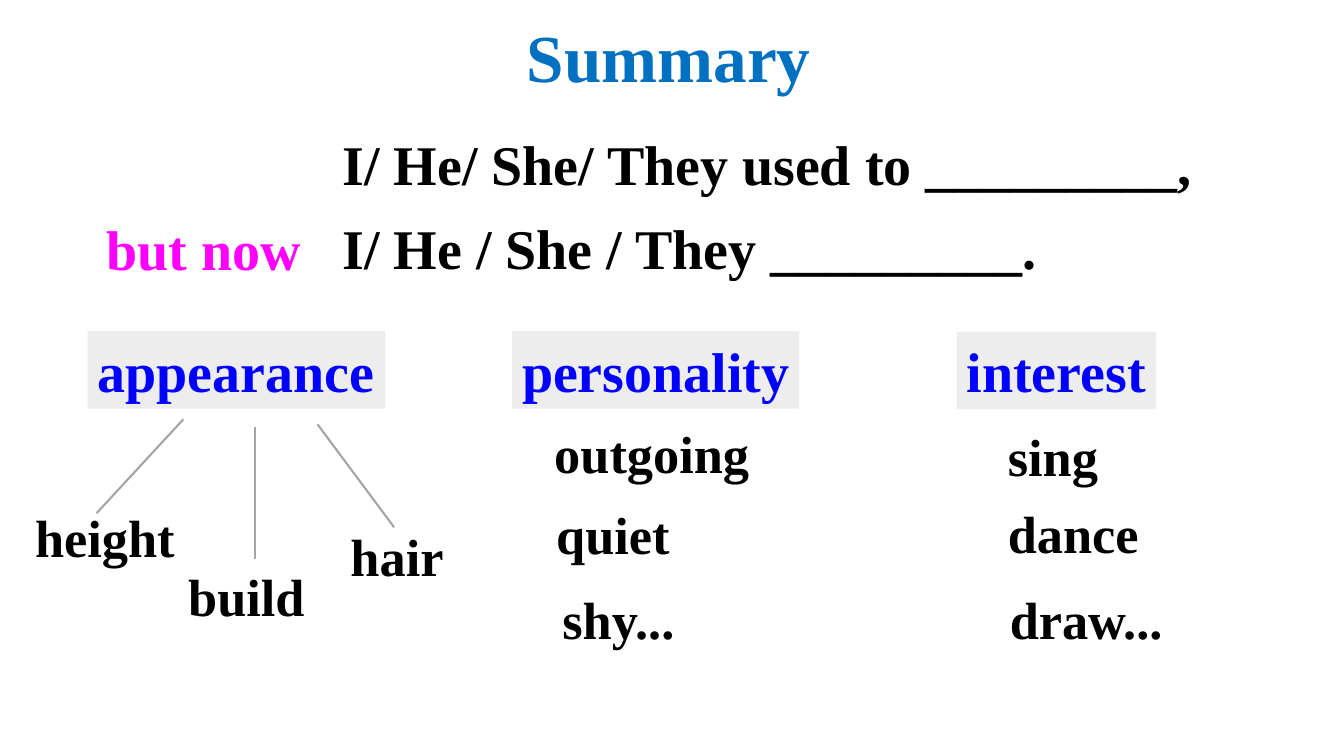
from dataclasses import dataclass

import pptx
import pptx.dml.color
import pptx.enum.shapes
import pptx.enum.text
import pptx.util
from lxml import etree

Pt = pptx.util.Pt


@dataclass(frozen=True)
class Theme:
    font: str = "Times New Roman"
    title_size: float = 48
    lead_size: float = 40
    word_size: float = 37.4
    title: str = "0070C0"
    text: str = "000000"
    accent: str = "FF00FF"
    topic: str = "0000FF"
    topic_fill: str = "EDEDED"
    branch: str = "A5A5A5"


THEME = Theme()

# Offsets are measured from the topic box: (word, x, y, width).
TOPICS = [
    ("appearance", (62.6, 236.5, 212.4, 55.4),
     [("height", -44.6, 120.7, 116), ("build", 64.8, 163.1, 100), ("hair", 180.7, 134.7, 83)]),
    ("personality", (365.8, 236.5, 205.2, 55.4),
     [("outgoing", 23, 60.9, 156), ("quiet", 24.4, 118.5, 98), ("shy...", 28.8, 179.2, 97)]),
    ("interest", (683.3, 236.9, 142.6, 55.4),
     [("sing", 29.5, 62.6, 82), ("dance", 29.5, 117.8, 110), ("draw...", 30.9, 178.8, 126)]),
]
BRANCHES = [(68.4, 63, 6.5, 130), (119.5, 68.8, 119.5, 163.1), (164.2, 66.6, 218.9, 140.1)]
WORD_HEIGHT = 52.6


def rgb(value):
    return pptx.dml.color.RGBColor.from_string(value)


def points(values):
    return [Pt(value) for value in values]


def write(shape, lines, size, color, spacing=None, wrap=False, align="LEFT", anchor="TOP"):
    """Fill a shape with bold lines; unwrapped shapes grow to fit their text."""
    frame = shape.text_frame
    frame.word_wrap = wrap
    if not wrap:
        frame.auto_size = pptx.enum.text.MSO_AUTO_SIZE.SHAPE_TO_FIT_TEXT
    frame.vertical_anchor = getattr(pptx.enum.text.MSO_ANCHOR, anchor)
    frame.text = "\n".join(lines)
    for para in frame.paragraphs:
        para.alignment = getattr(pptx.enum.text.PP_ALIGN, align)
        para.line_spacing = spacing
        para.font.name = THEME.font
        para.font.size = Pt(size)
        para.font.bold = True
        para.font.color.rgb = rgb(color)


def add_title(page, box):
    title = page.shapes.title
    title.left, title.top, title.width, title.height = points(box)
    write(title, ["Summary"], THEME.title_size, THEME.title,
          spacing=0.9, wrap=True, align="CENTER", anchor="MIDDLE")


def add_pattern(page, box):
    """Place the two model sentences and the linking words to their left."""
    left, top, width, height = box
    sentences = page.shapes.add_textbox(*points(box))
    write(sentences, ["I/ He/ She/ They used to _________,", "I/ He / She / They _________."],
          THEME.lead_size, THEME.text, spacing=1.25, wrap=True)
    link = page.shapes.add_textbox(*points((left - 168.5, top + 72.7, 163.4, 55.4)))
    write(link, ["but now"], THEME.lead_size, THEME.accent)


def add_topic(page, box, name, words):
    left, top, width, height = box
    label = page.shapes.add_shape(pptx.enum.shapes.MSO_SHAPE.RECTANGLE, *points(box))
    label.shadow.inherit = False
    label.fill.solid()
    label.fill.fore_color.rgb = rgb(THEME.topic_fill)
    label.line.fill.background()
    write(label, [name], THEME.lead_size, THEME.topic)
    for word, x, y, word_width in words:
        item = page.shapes.add_textbox(*points((left + x, top + y, word_width, WORD_HEIGHT)))
        write(item, [word], THEME.word_size, THEME.text)


def add_branches(page, box):
    left, top, width, height = box
    for x1, y1, x2, y2 in BRANCHES:
        branch = page.shapes.add_connector(
            pptx.enum.shapes.MSO_CONNECTOR.STRAIGHT,
            *points((left + x1, top + y1, left + x2, top + y2)))
        branch.line.color.rgb = rgb(THEME.branch)
        branch.line.width = Pt(1.5)
        etree.SubElement(branch.element.spPr, pptx.oxml.ns.qn("a:effectLst"))


def main():
    deck = pptx.Presentation()
    deck.slide_width, deck.slide_height = Pt(960), Pt(540)
    page = deck.slides.add_slide(deck.slide_layouts.get_by_name("Title Only"))
    add_title(page, (-5, 13.7, 965.5, 59.8))
    add_pattern(page, (237.6, 77, 635, 128.2))
    for name, box, words in TOPICS:
        add_topic(page, box, name, words)
    add_branches(page, TOPICS[0][1])
    deck.save("out.pptx")


if __name__ == "__main__":
    main()
